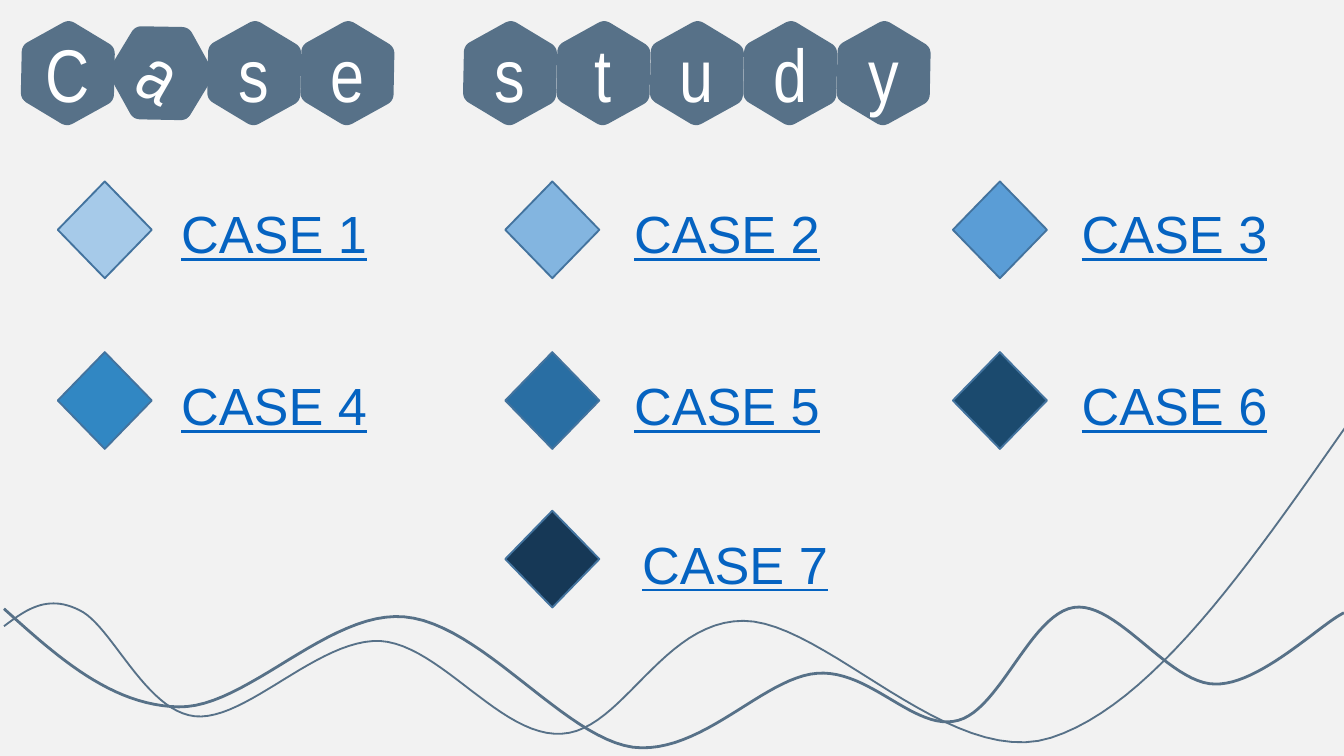
import math
from dataclasses import dataclass

from pptx import Presentation
from pptx import util as u
from pptx.dml import color
from pptx.enum import shapes, text


@dataclass(frozen=True)
class Theme:
    background: str = "F2F2F2"
    slate: str = "577188"
    white: str = "FFFFFF"
    link: str = "0563C1"
    outline: str = "43739E"
    title_font: str = "Arial Narrow"
    title_size: int = 40
    case_font: str = "Arial"
    case_size: int = 28


THEME = Theme()

TILE_WIDTH = 0.77
TILE_RADIUS = 0.4
TILE_ROUNDING = 0.13
TILE_TILT = 31.1
LETTER_TOP, LETTER_WIDTH, LETTER_HEIGHT = 0.16, 0.71, 0.77
LETTER_TURNS = {"a": 30}
WORDS = [("Case", 0.12, 2.2), ("study", 3.41, 6.19)]

CASES = [
    ("CASE 1", 0.43, 1.35, 1.25, 1.45, "A6CAE9"),
    ("CASE 2", 3.76, 1.35, 4.62, 1.45, "83B5E0"),
    ("CASE 3", 7.09, 1.35, 7.95, 1.45, "5A9DD6"),
    ("CASE 4", 0.43, 2.62, 1.25, 2.73, "3187C3"),
    ("CASE 5", 3.76, 2.62, 4.62, 2.73, "296EA3"),
    ("CASE 6", 7.09, 2.62, 7.95, 2.73, "1B4A6E"),
    ("CASE 7", 3.76, 3.8, 4.68, 3.91, "163856"),
]

THIN_WAVE = [
    (10.01, 3.18), (9.29, 4.21), (8.57, 5.25), (7.82, 5.49),
    (7.07, 5.73), (6.14, 4.62), (5.53, 4.62),
    (4.93, 4.62), (4.63, 5.44), (4.18, 5.46),
    (3.73, 5.49), (3.28, 4.8), (2.83, 4.77),
    (2.37, 4.75), (1.83, 5.37), (1.45, 5.33),
    (1.08, 5.29), (0.83, 4.65), (0.59, 4.54),
    (0.35, 4.42), (0.19, 4.54), (0.03, 4.66),
]
THICK_WAVE = [
    (0.03, 4.53), (0.43, 4.89), (0.83, 5.25), (1.33, 5.26),
    (1.83, 5.27), (2.45, 4.54), (3.01, 4.59),
    (3.58, 4.64), (4.2, 5.49), (4.71, 5.56),
    (5.22, 5.62), (5.68, 5.04), (6.08, 5.01),
    (6.48, 4.98), (6.81, 5.45), (7.13, 5.36),
    (7.44, 5.28), (7.67, 4.57), (7.99, 4.52),
    (8.31, 4.47), (8.7, 5.09), (9.04, 5.09),
    (9.37, 5.1), (9.83, 4.64), (10, 4.56),
]


def rgb(value):
    return color.RGBColor.from_string(value)


def curve(controls, steps):
    degree = len(controls) - 1
    points = []
    for step in range(steps + 1):
        t = step / steps
        weights = [math.comb(degree, i) * t**i * (1 - t) ** (degree - i)
                   for i in range(degree + 1)]
        points.append(tuple(sum(w * point[axis] for w, point in zip(weights, controls))
                            for axis in (0, 1)))
    return points


def add_outline(container, points, closed):
    start, *rest = [(u.Inches(x), u.Inches(y)) for x, y in points]
    builder = container.build_freeform(*start)
    builder.add_line_segments(rest, close=closed)
    outline = builder.convert_to_shape()
    outline.shadow.inherit = False
    return outline


def add_wave(page, controls, weight):
    points = controls[:1]
    for start in range(0, len(controls) - 1, 3):
        points = points + curve(controls[start:start + 4], 24)[1:]
    wave = add_outline(page.shapes, points, False)
    wave.fill.background()
    wave.line.color.rgb = rgb(THEME.slate)
    wave.line.width = u.Pt(weight)


def add_label(container, left, top, width, height, words, font, size, tint):
    box = container.add_textbox(u.Inches(left), u.Inches(top),
                                u.Inches(width), u.Inches(height))
    frame = box.text_frame
    frame.word_wrap = True
    frame.auto_size = text.MSO_AUTO_SIZE.SHAPE_TO_FIT_TEXT
    para = frame.paragraphs[0]
    span = para.add_run()
    span.text = words
    span.font.name = font
    span.font.size = u.Pt(size)
    span.font.color.rgb = rgb(tint)
    return box, para, span


def rounded_hexagon(center_x, center_y):
    corners = [(center_x + TILE_RADIUS * math.cos(math.radians(60 * i)),
                center_y + TILE_RADIUS * math.sin(math.radians(60 * i)))
               for i in range(6)]

    def toward(corner, neighbour):
        return tuple(a + TILE_ROUNDING * (b - a) for a, b in zip(corner, neighbour))

    points = []
    for i, corner in enumerate(corners):
        before, after = corners[i - 1], corners[(i + 1) % 6]
        points += curve([toward(corner, before), corner, toward(corner, after)], 8)
    return points


def add_letter_tile(page, letter, left):
    turn = LETTER_TURNS.get(letter, 0)
    center_x = left + TILE_WIDTH / 2
    center_y = LETTER_TOP + LETTER_HEIGHT / 2
    group = page.shapes.add_group_shape()
    tile = add_outline(group.shapes, rounded_hexagon(center_x, center_y), True)
    tile.fill.solid()
    tile.fill.fore_color.rgb = rgb(THEME.slate)
    tile.line.fill.background()
    tile.rotation = TILE_TILT + turn
    box, para, _ = add_label(group.shapes, center_x - LETTER_WIDTH / 2, LETTER_TOP,
                             LETTER_WIDTH, LETTER_HEIGHT, letter,
                             THEME.title_font, THEME.title_size, THEME.white)
    para.alignment = text.PP_ALIGN.CENTER
    box.rotation = turn


def add_word(page, word, first_left, last_left):
    pitch = (last_left - first_left) / (len(word) - 1)
    for position, letter in enumerate(word):
        add_letter_tile(page, letter, first_left + position * pitch)


def add_case(page, name, left, top, label_left, label_top, fill):
    diamond = page.shapes.add_shape(shapes.MSO_SHAPE.DIAMOND, u.Inches(left), u.Inches(top),
                                    u.Inches(0.7), u.Inches(0.72))
    diamond.shadow.inherit = False
    diamond.fill.solid()
    diamond.fill.fore_color.rgb = rgb(fill)
    diamond.line.color.rgb = rgb(THEME.outline)
    diamond.line.width = u.Pt(1)
    _, _, span = add_label(page.shapes, label_left, label_top, 2.03, 0.57, name,
                           THEME.case_font, THEME.case_size, THEME.link)
    span.font.underline = True


def main():
    deck = Presentation()
    deck.slide_width = u.Inches(10)
    deck.slide_height = deck.slide_width * 9 // 16
    page = deck.slides.add_slide(deck.slide_layouts[6])
    page.background.fill.solid()
    page.background.fill.fore_color.rgb = rgb(THEME.background)

    add_wave(page, THIN_WAVE, 1)
    for word in WORDS:
        add_word(page, *word)
    for case in CASES:
        add_case(page, *case)
    add_wave(page, THICK_WAVE, 1.5)
    deck.save("out.pptx")


if __name__ == "__main__":
    main()
